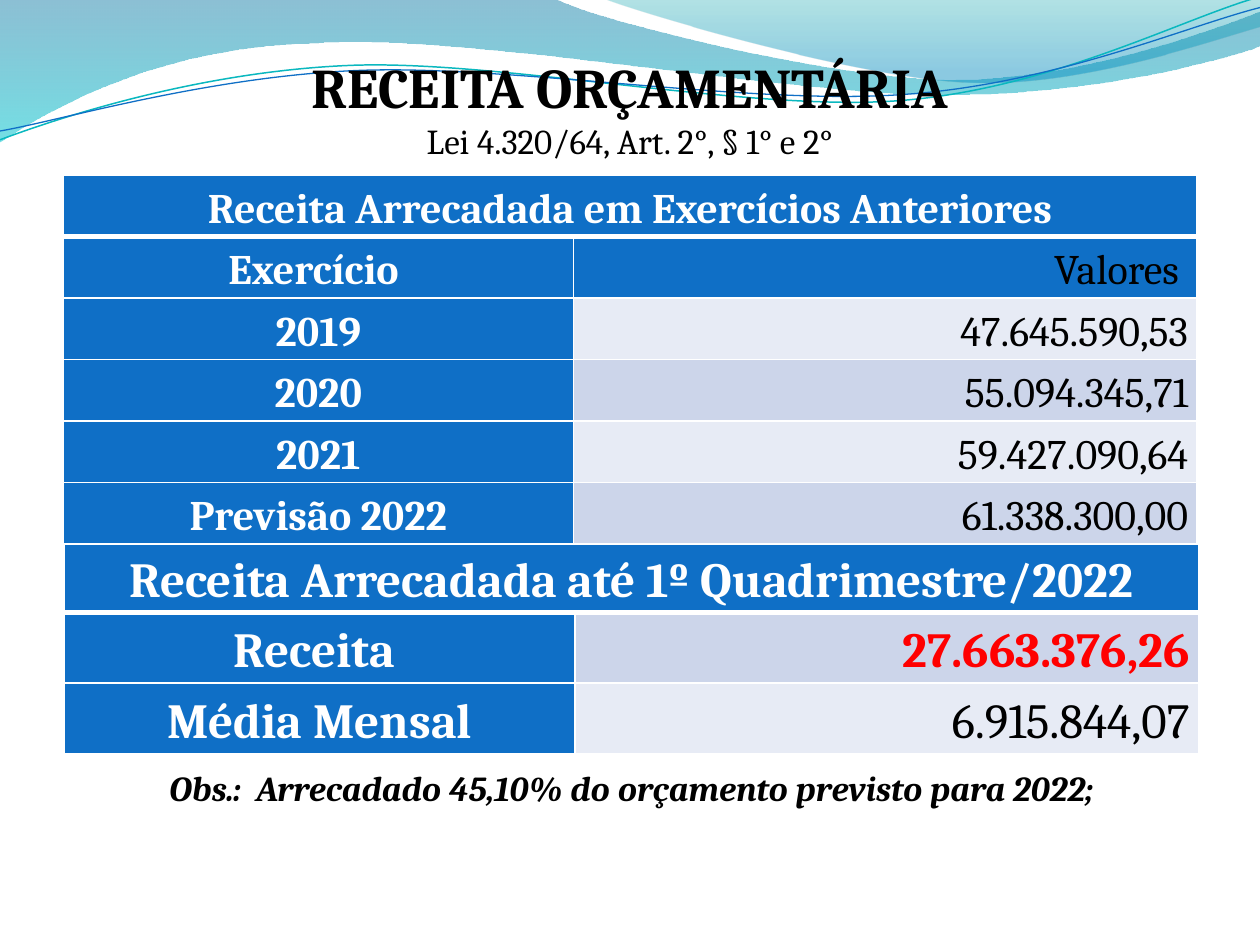
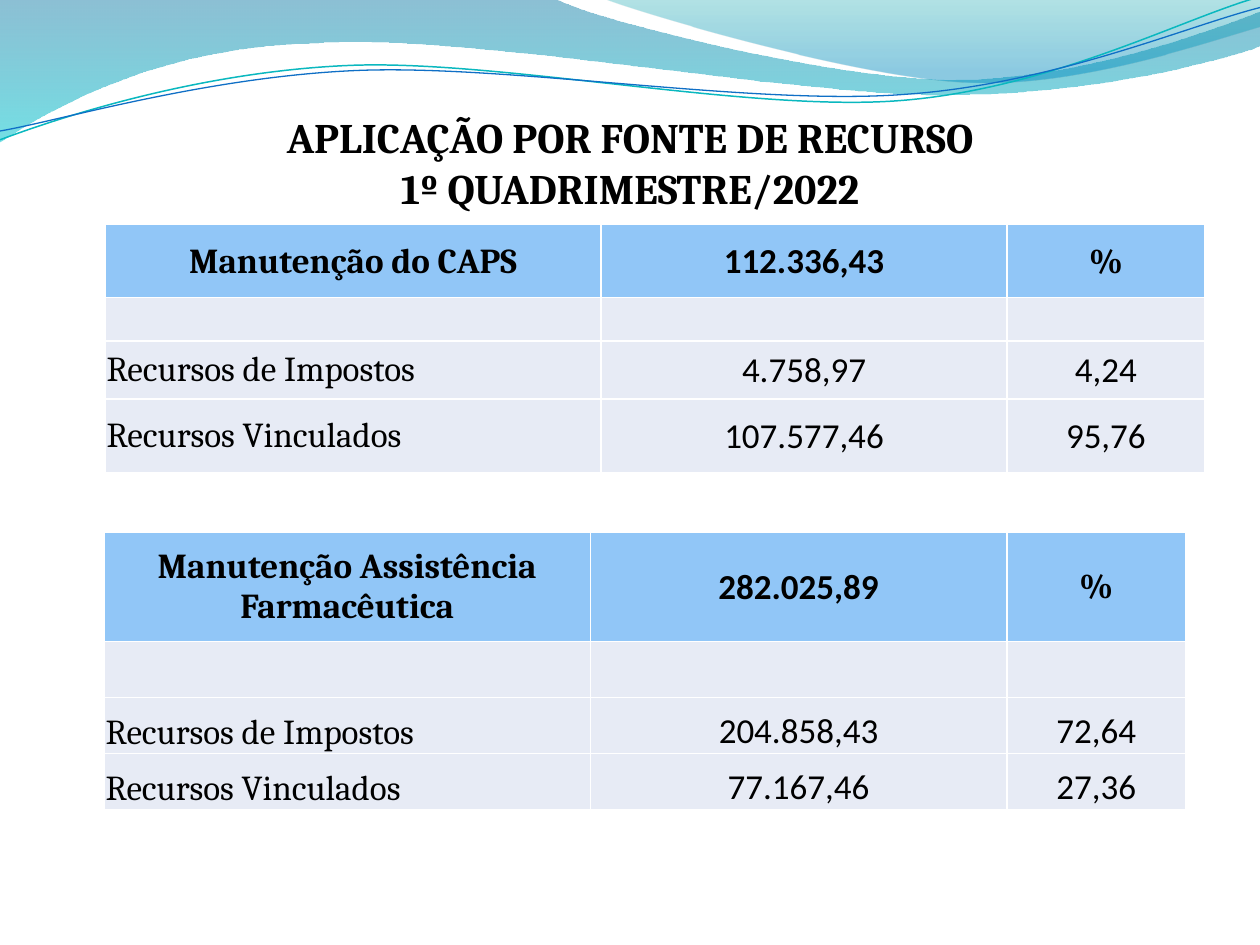
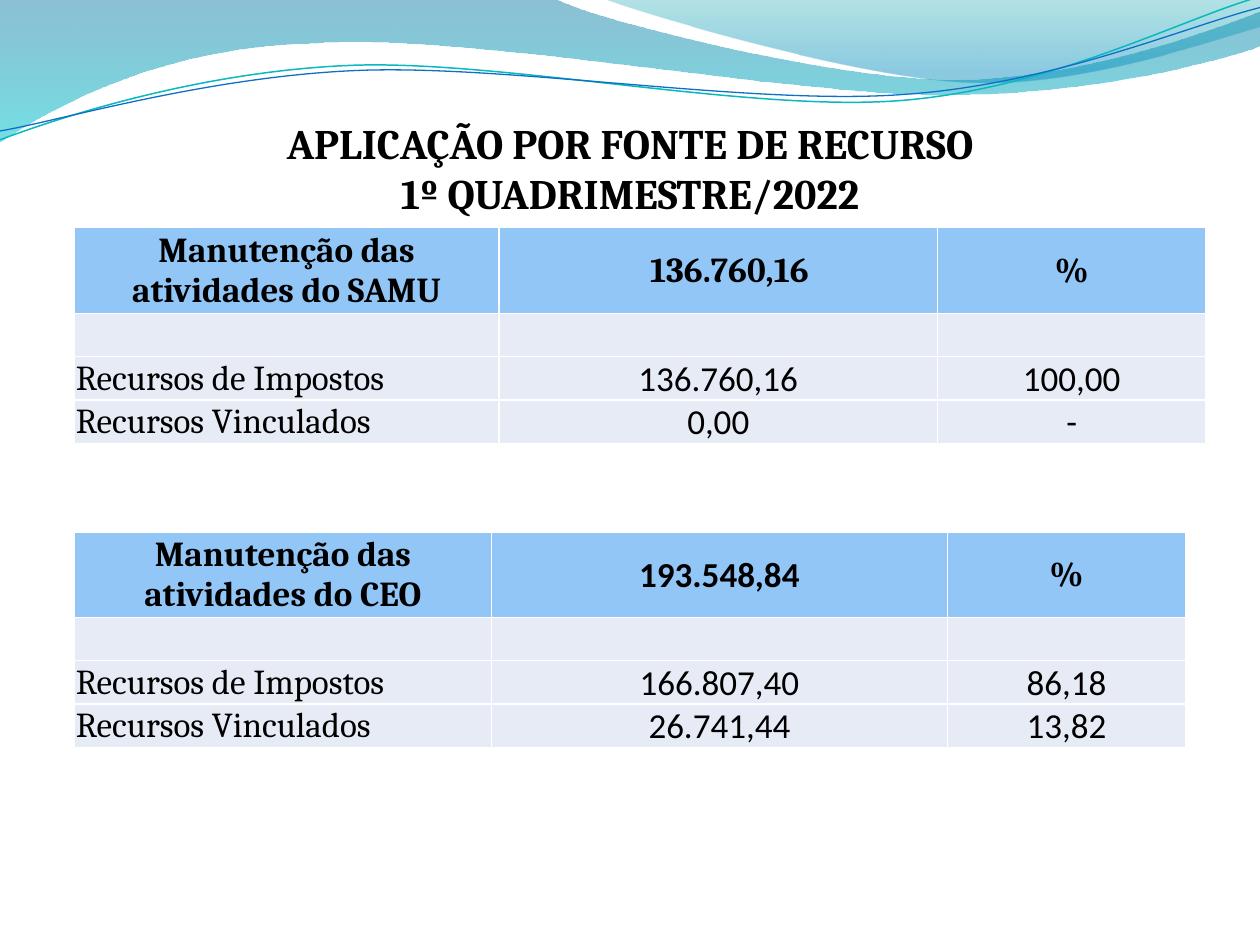
"""Builds three slides on municipal revenue and spending by source of funds."""
import lxml.etree
import pptx
import pptx.dml.color
import pptx.enum.text
import pptx.oxml.ns
import pptx.util

Cm, Pt = pptx.util.Cm, pptx.util.Pt
ALIGN = pptx.enum.text.PP_ALIGN
ANCHOR = pptx.enum.text.MSO_ANCHOR

BLUE, SKY, PALE, BAND = "0F6FC6", "91C6F7", "E7EBF5", "CCD5EA"
BLACK, WHITE, RED = "000000", "FFFFFF", "FF0000"
SERIF, SANS = "Cambria", "Calibri"
INCH = 2.54

# Wave outlines run in inches: two numbers draw a line, six a curve.
WAVES = [
    {"start": (0, 0), "stops": [(0, "0074A1", 45), (1, "00C6CF", 55)],
     "parts": [(4.4, -0.01), (4.76, 0.17, 6.64, 0.63, 7.58, 0.63),
               (8.53, 0.63, 9.58, 0.26, 10, 0.09), (10.01, 0.36),
               (9.83, 0.44, 8.7, 0.76, 7.46, 0.75), (6.22, 0.75, 3.82, 0.28, 2.57, 0.34),
               (1.29, 0.36, 0.46, 0.83, -0.01, 1.13), (0, 0)]},
    {"start": (4.79, -0.01), "stops": [(0, "00A1A9", 30), (0.8, "008BBF", 45)],
     "parts": [(5.09, 0.11, 6.82, 0.62, 7.69, 0.65),
               (8.56, 0.69, 9.61, 0.32, 10, 0.21), (10, 0), (4.79, -0.01)]},
    {"start": (0, 1.11), "line": ("0AB8BF", 0.85),
     "parts": [(0.48, 0.93, 1.58, 0.57, 2.77, 0.52), (3.95, 0.47, 5.93, 0.89, 7.13, 0.8),
               (8.33, 0.71, 9.38, 0.15, 9.98, -0.02)]},
    {"start": (0, 1.04), "line": (BLUE, 0.75),
     "parts": [(0.47, 0.96, 1.64, 0.61, 2.83, 0.56), (4.03, 0.51, 5.97, 0.84, 7.17, 0.75),
               (8.36, 0.67, 9.41, 0.21, 10, 0.06)]},
]

REVENUE_COLUMNS = [10.29, 12.57]
REVENUE_TABLES = [
    {"at": (1.3, 10.92), "row": 1.42, "size": 28, "fills": [BAND, PALE],
     "heading": "Receita Arrecadada até 1º Quadrimestre/2022",
     "rows": [("Receita ", "27.663.376,26"), ("Média Mensal", "6.915.844,07")],
     "strong": "27.663.376,26"},
    {"at": (1.27, 3.53), "row": 1.24, "size": 24, "fills": [BLUE, PALE, BAND, PALE, BAND],
     "heading": "Receita Arrecadada em Exercícios Anteriores",
     "rows": [("Exercício ", "Valores "), ("2019", "47.645.590,53"),
              ("2020", "55.094.345,71"), ("2021", "59.427.090,64"),
              ("Previsão 2022", "61.338.300,00")]},
]
REVENUE_TITLE = [("RECEITA ORÇAMENTÁRIA", {"size": 32, "bold": True}),
                 ("Lei 4.320/64, Art. 2°, § 1° e 2°", {"size": 20, "bold": False})]
REVENUE_NOTE = "Obs.:  Arrecadado 45,10% do orçamento previsto para 2022;"

SOURCE_TITLE = [(text, {"size": 24, "bold": True})
                for text in ("APLICAÇÃO POR FONTE DE RECURSO", "1º QUADRIMESTRE/2022")]
SOURCES = ["Recursos de Impostos", "Recursos Vinculados"]
SOURCE_PAGES = [
    {"title_top": 2.13, "tables": [
        {"at": (2.12, 4.52), "columns": [10, 8.18, 3.99], "heights": [1.48, 0.87, 1.17, 1.48],
         "heading": "Manutenção do CAPS", "total": "112.336,43",
         "values": [("4.758,97", "4,24"), ("107.577,46", "95,76")]},
        {"at": (2.1, 10.72), "columns": [9.8, 8.4, 3.6], "heights": [2.21, 1.13, 1.13, 1.13],
         "heading": "Manutenção Assistência Farmacêutica", "total": "282.025,89",
         "values": [("204.858,43", "72,64"), ("77.167,46", "27,36")],
         "anchor": ANCHOR.BOTTOM}]},
    {"title_top": 2.24, "tables": [
        {"at": (1.5, 4.59), "columns": [8.56, 8.84, 5.41], "heights": [1.7, 0.87, 0.87, 0.87],
         "heading": "Manutenção das atividades do SAMU", "total": "136.760,16",
         "values": [("136.760,16", "100,00"), ("0,00", "-")],
         "total_font": SERIF, "total_indent": 0.48},
        {"at": (1.5, 10.72), "columns": [8.41, 9.19, 4.8], "heights": [1.7, 0.87, 0.87, 0.87],
         "heading": "Manutenção das atividades do CEO", "total": "193.548,84",
         "values": [("166.807,40", "86,18"), ("26.741,44", "13,82")]}]},
]


def rgb(value):
    """Turn a hex string into a colour."""
    return pptx.dml.color.RGBColor.from_string(value)


def assign(target, values):
    """Set each named attribute on the target."""
    for name, value in values.items():
        setattr(target, name, value)


def add_xml(parent, tag, **attributes):
    """Append one drawing element and return it."""
    return lxml.etree.SubElement(parent, pptx.oxml.ns.qn(tag), attributes)


def write(frame, lines, align=ALIGN.CENTER, spacing=1.0):
    """Write one formatted paragraph for each pair of text and font values."""
    for index, (text, values) in enumerate(lines):
        para = frame.add_paragraph() if index else frame.paragraphs[0]
        assign(para, {"alignment": align, "line_spacing": spacing})
        span = para.add_run()
        span.text = text
        look = {"name": SERIF, "color": BLACK, **values}
        span.font.color.rgb = rgb(look.pop("color"))
        assign(span.font, {**look, "size": Pt(look["size"])})


def add_outline(page, start, parts, close):
    """Draw a freeform whose six-number parts are curves."""
    knots = [(Cm(part[i] * INCH), Cm(part[i + 1] * INCH))
             for part in parts for i in range(0, len(part), 2)]
    builder = page.shapes.build_freeform(*(Cm(value * INCH) for value in start))
    builder.add_line_segments(knots, close=close)
    shape = builder.convert_to_shape()
    segments = iter(shape.element.spPr.findall(".//" + pptx.oxml.ns.qn("a:lnTo")))
    for part in parts:
        group = [next(segments) for _ in range(len(part) // 2)]
        if len(group) == 3:
            curve = lxml.etree.Element(pptx.oxml.ns.qn("a:cubicBezTo"))
            group[0].addprevious(curve)
            for segment in group:
                curve.append(segment[0])
                segment.getparent().remove(segment)
    return shape


def add_waves(page):
    """Draw the waves and place them on the layout that every page shares."""
    for index, wave in enumerate(WAVES):
        shape = add_outline(page, wave["start"], wave["parts"], "stops" in wave)
        shape.shadow.inherit = False
        if "stops" in wave:
            shape.line.fill.background()
            shape.fill.gradient()
            shape.fill.gradient_angle = 270
            for stop, (position, color, _) in zip(shape.fill.gradient_stops, wave["stops"]):
                stop.position, stop.color.rgb = position, rgb(color)
            colors = shape.element.spPr.findall(".//" + pptx.oxml.ns.qn("a:srgbClr"))
            for node, (_, _, opacity) in zip(colors, wave["stops"]):
                add_xml(node, "a:alpha", val=str(opacity * 1000))
        else:
            color, width = wave["line"]
            shape.fill.background()
            shape.line.color.rgb = rgb(color)
            shape.line.width = Pt(width)
        page.slide_layout.shapes.element.insert(2 + index, shape.element)


def place(shape, box):
    """Move and size a shape from centimetres."""
    assign(shape, dict(zip(("left", "top", "width", "height"), map(Cm, box))))


def add_page(deck, lines, box, anchor):
    """Add a title-only page with a formatted title."""
    page = deck.slides.add_slide(deck.slide_layouts[5])
    title = page.shapes.title
    place(title, box)
    assign(title.text_frame, {"vertical_anchor": anchor, "word_wrap": True,
                              "auto_size": pptx.enum.text.MSO_AUTO_SIZE.SHAPE_TO_FIT_TEXT})
    write(title.text_frame, lines)
    return page


def add_grid(page, at, columns, heights):
    """Add a plain table with the given column widths and row heights."""
    table = page.shapes.add_table(len(heights), len(columns), *map(Cm, at),
                                  Cm(sum(columns)), Cm(sum(heights))).table
    assign(table, {"first_row": False, "horz_banding": False})
    for column, width in zip(table.columns, columns):
        column.width = Cm(width)
    for row, height in zip(table.rows, heights):
        row.height = Cm(height)
    return table


def style_cell(cell, fill, side, bottom=0.03, anchor=ANCHOR.MIDDLE, bottom_line=1):
    """Set the margins, white borders and fill of a cell."""
    assign(cell, {"margin_left": Cm(side), "margin_right": Cm(side), "margin_top": Cm(0.03),
                  "margin_bottom": Cm(bottom), "vertical_anchor": anchor})
    widths = {"a:lnL": 1, "a:lnR": 1, "a:lnT": 1, "a:lnB": bottom_line}
    for tag, width in widths.items():
        line = add_xml(cell._tc.tcPr, tag, w=str(Pt(width)))
        add_xml(add_xml(line, "a:solidFill"), "a:srgbClr", val=WHITE)
    cell.fill.solid()
    cell.fill.fore_color.rgb = rgb(fill)


def add_revenue_table(page, item):
    """Add a revenue table with a heading over labels and values."""
    table = add_grid(page, item["at"], REVENUE_COLUMNS, [item["row"]] * (len(item["rows"]) + 1))
    label_look = {"size": item["size"], "bold": True, "color": WHITE}
    for cell in table.rows[0].cells:
        style_cell(cell, BLUE, 0.18, bottom_line=3)
    table.cell(0, 0).merge(table.cell(0, 1))
    write(table.cell(0, 0).text_frame, [(item["heading"], label_look)], spacing=1.15)
    for index, ((label, value), fill) in enumerate(zip(item["rows"], item["fills"]), 1):
        strong = value == item.get("strong")
        value_look = {"size": item["size"], "bold": strong, "color": RED if strong else BLACK}
        cells = [(label, BLUE, label_look, ALIGN.CENTER), (value, fill, value_look, ALIGN.RIGHT)]
        for column, (text, color, look, align) in enumerate(cells):
            cell = table.cell(index, column)
            style_cell(cell, color, 0.18)
            write(cell.text_frame, [(text, look)], align, 1.15)


def add_source_table(page, item):
    """Add a spending table split by source of funds."""
    table = add_grid(page, item["at"], item["columns"], item["heights"])
    rows = [(item["heading"], item["total"], " % "), ("", "", "")]
    rows += [(source, *values) for source, values in zip(SOURCES, item["values"])]
    for r, row in enumerate(rows):
        head = r == 0
        fonts = (SERIF, item.get("total_font", SANS), SERIF) if head else (SERIF, SANS, SANS)
        anchor = ANCHOR.MIDDLE if head else item.get("anchor", ANCHOR.MIDDLE)
        for c, (text, font) in enumerate(zip(row, fonts)):
            cell = table.cell(r, c)
            style_cell(cell, SKY if head else PALE, 0.03, 0, anchor)
            if text:
                align = ALIGN.CENTER if head or c else ALIGN.LEFT
                write(cell.text_frame, [(text, {"size": 20, "name": font, "bold": head})], align)
    if "total_indent" in item:
        table.cell(0, 1).margin_left = Cm(item["total_indent"])


def main():
    """Build and save the deck."""
    deck = pptx.Presentation()
    assign(deck, {"slide_width": Cm(25.4), "slide_height": Cm(19.05)})
    page = add_page(deck, REVENUE_TITLE, (1.7, 0.91, 22, 2.49), ANCHOR.MIDDLE)
    add_waves(page)
    for item in REVENUE_TABLES:
        add_revenue_table(page, item)
    note = page.shapes.add_textbox(*map(Cm, (1.3, 15.32, 22.86, 1.12)))
    note.text_frame.word_wrap = True
    write(note.text_frame, [(REVENUE_NOTE, {"size": 20, "bold": True, "italic": True})])
    for content in SOURCE_PAGES:
        box = (2.1, content["title_top"], 21.2, 2.31)
        page = add_page(deck, SOURCE_TITLE, box, ANCHOR.TOP)
        for item in content["tables"]:
            add_source_table(page, item)
    deck.save("out.pptx")


if __name__ == "__main__":
    main()
